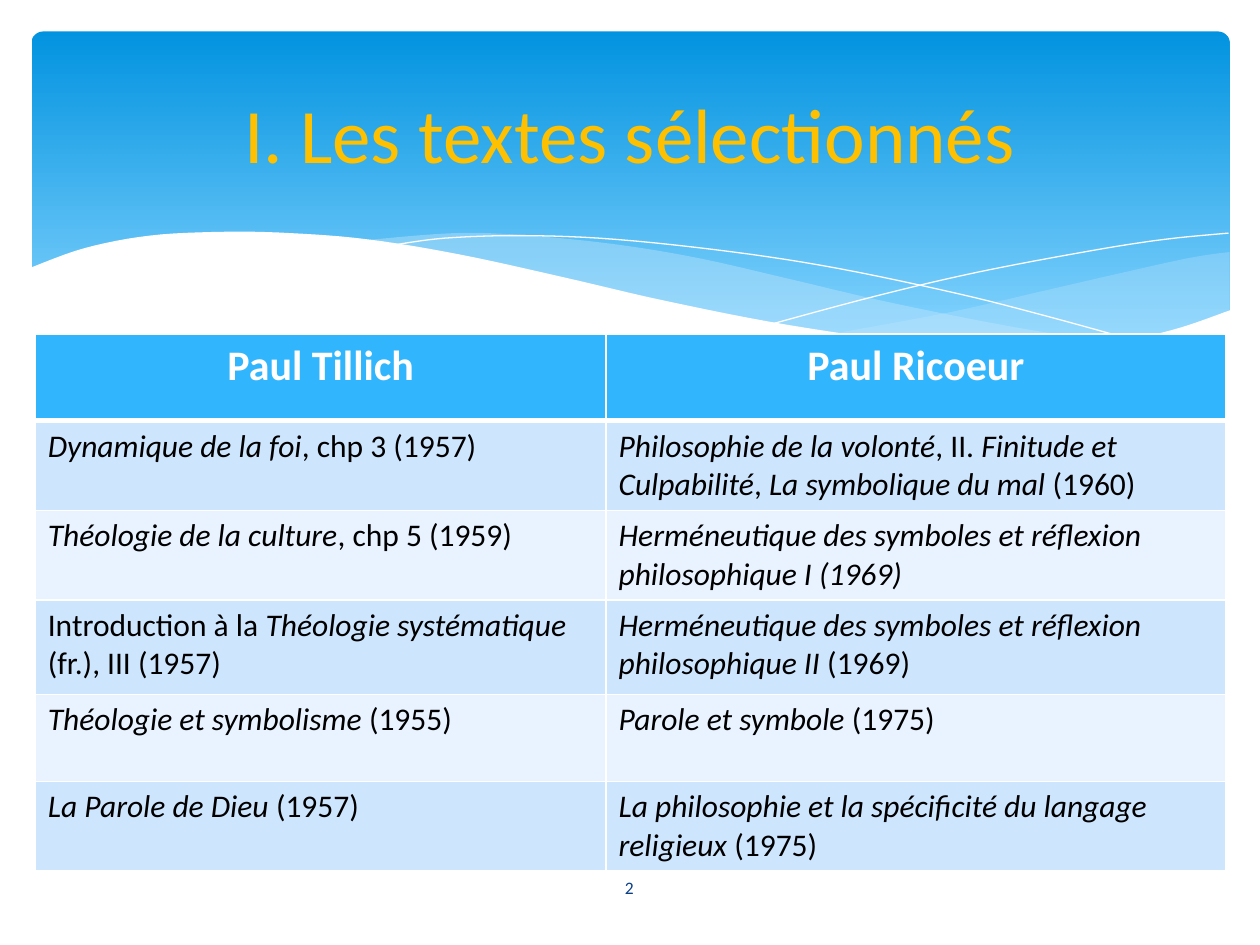
"""Build the slide that sets the selected texts of two authors side by side."""
from dataclasses import dataclass
from typing import NamedTuple

from lxml.etree import SubElement
from pptx import Presentation
from pptx.dml.color import RGBColor
from pptx.enum.shapes import MSO_SHAPE as Preset
from pptx.enum.text import MSO_ANCHOR as Anchor, PP_ALIGN as Align
from pptx.oxml.ns import qn
from pptx.util import Inches, Pt

Point = tuple[float, float]

FONT = "Calibri"
COLORS = {
    "banner_top": "0293E0", "banner_bottom": "83D3FE", "wave": "C6E7FC",
    "white": "FFFFFF", "black": "000000", "title": "FFC000",
    "number": "073E87", "header": "31B6FD", "odd": "CEE5FE", "even": "E8F3FF",
}


class Run(NamedTuple):
    text: str
    italic: bool = False


@dataclass
class Style:
    size: float
    color: str
    bold: bool = False
    align: Align = Align.LEFT


@dataclass
class Wave:
    edges: list[list[Point]]
    color: str = "wave"
    opacity: int = 100
    filled: bool = True


@dataclass
class Label:
    text: str
    left: float
    top: float
    width: float
    height: float
    style: Style


WAVES = [
    Wave([[(9.76, 2), (9.48, 2.04), (9.06, 2.13), (8.32, 2.3), (7.53, 2.48), (6.61, 2.65)],
          [(6.61, 2.65), (7.19, 2.72), (7.69, 2.77), (8.24, 2.77), (8.81, 2.73),
           (9.35, 2.62), (9.76, 2.47)]], opacity=29),
    Wave([[(8.93, 2.73), (8.07, 2.6), (7.06, 2.4), (6.29, 2.22), (5.55, 2.05), (4.89, 1.94),
           (4.2, 1.87), (3.61, 1.85), (2.86, 1.91)],
          [(2.86, 1.91), (3.62, 2.03), (4.49, 2.22), (5.3, 2.4), (6.18, 2.58), (6.95, 2.7),
           (7.61, 2.77), (8.18, 2.78), (8.93, 2.73)]], opacity=40),
    Wave([[(3.09, 1.95), (3.53, 1.89), (4.16, 1.87), (4.89, 1.9), (5.82, 2), (6.65, 2.13),
           (7.6, 2.33), (8.31, 2.51), (9.07, 2.72)]], "white", filled=False),
    Wave([[(6.13, 2.57), (6.95, 2.35), (7.76, 2.16), (8.66, 1.99), (9.24, 1.9),
           (9.75, 1.85)]], "white", filled=False),
    Wave([[(9.77, 2.46), (9.3, 2.62), (8.75, 2.73), (8.09, 2.77), (7.26, 2.72), (6.26, 2.58),
           (5.29, 2.39), (4.47, 2.2), (3.65, 2.02), (2.92, 1.9), (2.3, 1.85), (1.77, 1.84),
           (1.19, 1.87), (0.67, 1.97), (0.23, 2.13)],
          [(0.23, 3.29), (9.77, 3.29)]], "white"),
]

TITLE_STYLE = Style(44, "title", align=Align.CENTER)
NUMBER_STYLE = Style(10, "number", align=Align.CENTER)
HEADER_STYLE = Style(24, "white", True, Align.CENTER)
BODY_STYLE = Style(18, "black")
LABELS = [
    Label("I. Les textes sélectionnés", 0.5, 0.37, 9, 1.37, TITLE_STYLE),
    Label("2", 4.36, 6.84, 1.27, 0.4, NUMBER_STYLE),
]

COLUMN_WIDTHS = [4.53, 4.92]
ROW_HEIGHTS = [0.69, 0.69, 0.69, 0.75, 0.69, 0.69]
ROWS = [
    [[Run("Paul Tillich")], [Run("Paul Ricoeur")]],
    [[Run("Dynamique de la foi", True), Run(", chp 3 (1957)")],
     [Run("Philosophie de la volonté", True), Run(", II. "),
      Run("Finitude et Culpabilité", True), Run(", "),
      Run("La symbolique du mal ", True), Run("(1960)")]],
    [[Run("Théologie de la culture", True), Run(", chp 5 (1959)")],
     [Run("Herméneutique des symboles et réflexion philosophique I (1969)", True)]],
    [[Run("Introduction à la "), Run("Théologie systématique ", True),
      Run("(fr.), III (1957)")],
     [Run("Herméneutique des symboles et réflexion philosophique II", True),
      Run(" (1969)")]],
    [[Run("Théologie et symbolisme ", True), Run("(1955)")],
     [Run("Parole et symbole ", True), Run("(1975)")]],
    [[Run("La Parole de Dieu ", True), Run("(1957)")],
     [Run("La philosophie et la spécificité du langage religieux ", True),
      Run("(1975)")]],
]


def rgb(name: str) -> RGBColor:
    return RGBColor.from_string(COLORS[name])


def smooth(points: list[Point], steps: int = 6) -> list[Point]:
    if len(points) < 3:
        return points
    padded = [points[0], *points, points[-1]]
    curve = [points[0]]
    for a, b, c, d in zip(padded, padded[1:], padded[2:], padded[3:]):
        for step in range(1, steps + 1):
            t = step / steps
            x, y = (
                q + t * (r - p) / 2 + t**2 * (2*p - 5*q + 4*r - s) / 2
                + t**3 * (3*q - p - 3*r + s) / 2
                for p, q, r, s in zip(a, b, c, d)
            )
            curve.append((x, y))
    return curve


def write_runs(paragraph, runs: list[Run], style: Style) -> None:
    paragraph.alignment = style.align
    for item in runs:
        run = paragraph.add_run()
        run.text = item.text
        run.font.name, run.font.size = FONT, Pt(style.size)
        run.font.bold, run.font.italic = style.bold, item.italic
        run.font.color.rgb = rgb(style.color)


def draw_banner(slide) -> None:
    shape = slide.shapes.add_shape(
        Preset.ROUNDED_RECTANGLE, Inches(0.25), Inches(0.25), Inches(9.51), Inches(2.7))
    shape.adjustments[0] = 0.034
    shape.shadow.inherit = False
    shape.line.fill.background()
    shape.fill.gradient()
    shape.fill.gradient_angle = 270
    stops = zip(shape.fill.gradient_stops, ("banner_top", "banner_bottom"), (0, 0.9))
    for stop, color, position in stops:
        stop.color.rgb = rgb(color)
        stop.position = position


def draw_wave(slide, wave: Wave) -> None:
    points = [(Inches(x), Inches(y)) for edge in wave.edges for x, y in smooth(edge)]
    builder = slide.shapes.build_freeform(*points[0])
    builder.add_line_segments(points[1:], close=wave.filled)
    shape = builder.convert_to_shape()
    shape.shadow.inherit = False
    if not wave.filled:
        shape.fill.background()
        shape.line.color.rgb = rgb(wave.color)
        shape.line.width = Pt(0)
        return
    shape.line.fill.background()
    shape.fill.solid()
    shape.fill.fore_color.rgb = rgb(wave.color)
    color = shape.fill._xPr.find(qn("a:solidFill"))[0]
    SubElement(color, qn("a:alpha"), val=str(wave.opacity * 1000))


def draw_label(slide, label: Label) -> None:
    box = slide.shapes.add_textbox(
        *map(Inches, (label.left, label.top, label.width, label.height)))
    frame = box.text_frame
    frame.word_wrap = True
    frame.vertical_anchor = Anchor.MIDDLE
    write_runs(frame.paragraphs[0], [Run(label.text)], label.style)


def add_borders(cell, widths: dict[str, float]) -> None:
    properties = cell._tc.get_or_add_tcPr()
    for side, width in widths.items():
        line = SubElement(properties, qn(f"a:ln{side}"), w=str(Pt(width)))
        SubElement(SubElement(line, qn("a:solidFill")), qn("a:srgbClr"), val=COLORS["white"])


def draw_table(slide) -> None:
    table = slide.shapes.add_table(
        len(ROWS), len(COLUMN_WIDTHS), Inches(0.28), Inches(2.65),
        Inches(sum(COLUMN_WIDTHS)), Inches(sum(ROW_HEIGHTS))).table
    for column, width in zip(table.columns, COLUMN_WIDTHS):
        column.width = Inches(width)
    for index, (row, height) in enumerate(zip(ROWS, ROW_HEIGHTS)):
        table.rows[index].height = Inches(height)
        color = "header" if index == 0 else "odd" if index % 2 else "even"
        borders = {"L": 1, "R": 1, "T": 3 if index == 1 else 1, "B": 3 if index == 0 else 1}
        for cell, runs in zip(table.rows[index].cells, row):
            add_borders(cell, borders)
            cell.fill.solid()
            cell.fill.fore_color.rgb = rgb(color)
            write_runs(cell.text_frame.paragraphs[0], runs, BODY_STYLE if index else HEADER_STYLE)


def main() -> None:
    presentation = Presentation()
    presentation.slide_width, presentation.slide_height = Inches(10), Inches(7.5)
    slide = presentation.slides.add_slide(presentation.slide_layouts[6])
    draw_banner(slide)
    for wave in WAVES:
        draw_wave(slide, wave)
    draw_table(slide)
    for label in LABELS:
        draw_label(slide, label)
    presentation.save("out.pptx")


if __name__ == "__main__":
    main()
